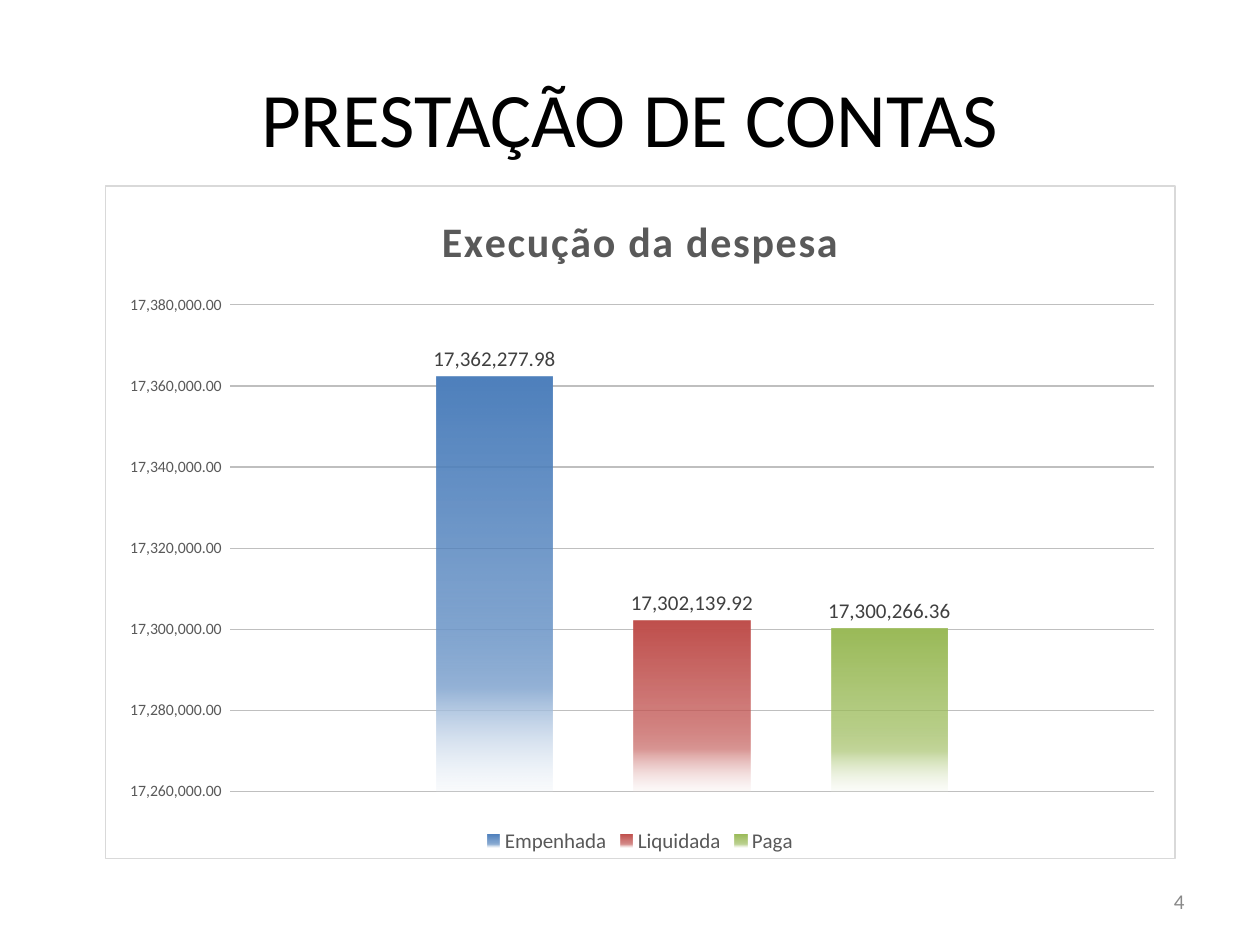
from pptx import Presentation, oxml
from pptx.chart import data
from pptx.dml import color
from pptx.enum import chart as kinds, text
from pptx.oxml import ns
from pptx import util as u

RGB = color.RGBColor
WHITE = RGB(0xFF, 0xFF, 0xFF)
BLACK = RGB(0, 0, 0)
DARK = RGB(0x40, 0x40, 0x40)
GRAY = RGB(0x59, 0x59, 0x59)
PALE = RGB(0x89, 0x89, 0x89)
GRID = RGB(0xBF, 0xBF, 0xBF)
EDGE = RGB(0xD9, 0xD9, 0xD9)

MONEY = '_(* #,##0.00_);_(* \\(#,##0.00\\);_(* "-"??_);_(@_)'
STOPS = (0, 100), (51, 75), (75, 100), (100, 15)
BARS = [
    ("Empenhada", 17362277.98,
     (RGB(0x4F, 0x81, 0xBD), RGB(0x95, 0xB3, 0xD7), RGB(0xDC, 0xE6, 0xF2))),
    ("Liquidada", 17302139.92,
     (RGB(0xC0, 0x50, 0x4D), RGB(0xD9, 0x96, 0x94), RGB(0xF2, 0xDC, 0xDB))),
    ("Paga", 17300266.36,
     (RGB(0x9B, 0xBB, 0x59), RGB(0xC3, 0xD6, 0x9B), RGB(0xEB, 0xF1, 0xDE))),
]


def apply(item, **values):
    for name, value in values.items():
        setattr(item, name, value)


class Deck:
    face = "Calibri"

    def __init__(self, wide, high):
        self.file = Presentation()
        apply(self.file, slide_width=u.Inches(wide), slide_height=u.Inches(high))
        self.slide = self.file.slides.add_slide(self.file.slide_layouts[6])

    def area(self, left, top, wide, high):
        across, down = self.file.slide_width, self.file.slide_height
        return [round(v) for v in (left * across, top * down, wide * across, high * down)]

    def style(self, font, size, ink, bold=False):
        apply(font, name=self.face, size=u.Pt(size), bold=bold)
        font.color.rgb = ink

    def label(self, words, area, size, ink, align):
        box = self.slide.shapes.add_textbox(*self.area(*area))
        apply(box.text_frame, word_wrap=True, vertical_anchor=text.MSO_ANCHOR.MIDDLE)
        line = box.text_frame.paragraphs[0]
        line.alignment = align
        run = line.add_run()
        run.text = words
        self.style(run.font, size, ink)
        return box

    def fade(self, bar, tints):
        bar.format.fill.gradient()
        old = bar._element.find(".//" + ns.qn("a:gradFill"))
        marks = "".join(
            f'<a:gs pos="{spot * 1000}"><a:srgbClr val="{tint}">'
            f'<a:alpha val="{alpha * 1000}"/></a:srgbClr></a:gs>'
            for (spot, alpha), tint in zip(STOPS, (tints[0], *tints)))
        old.getparent().replace(old, oxml.parse_xml(
            f'<a:gradFill {ns.nsdecls("a")}><a:gsLst>{marks}</a:gsLst>'
            '<a:lin ang="5400000" scaled="0"/></a:gradFill>'))

    def frame(self, chart, fill, edge):
        chart._chartSpace.find(ns.qn("c:chart")).addnext(oxml.parse_xml(
            f'<c:spPr {ns.nsdecls("c", "a")}>'
            f'<a:solidFill><a:srgbClr val="{fill}"/></a:solidFill>'
            f'<a:ln w="{u.Pt(0.75)}"><a:solidFill><a:srgbClr val="{edge}"/>'
            '</a:solidFill></a:ln></c:spPr>'))

    def head(self, chart, words):
        frame = chart.chart_title.text_frame
        frame.text = words
        run = frame.paragraphs[0].runs[0]
        self.style(run.font, 24, GRAY, True)
        run.font._element.set("spc", "100")
        chart.chart_title.include_in_layout = False

    def scale(self, axis, low, high, step):
        apply(axis, minimum_scale=low, maximum_scale=high, major_unit=step,
              major_tick_mark=kinds.XL_TICK_MARK.NONE)
        apply(axis.tick_labels, number_format=MONEY, number_format_is_linked=False)
        self.style(axis.tick_labels.font, 9, GRAY)
        axis.format.line.fill.background()
        line = axis.major_gridlines.format.line
        line.width = u.Pt(0.75)
        line.color.rgb = GRID

    def columns(self, title, bars, area):
        table = data.CategoryChartData(number_format=MONEY)
        table.categories = ["1"]
        for name, value, _ in bars:
            table.add_series(name, [value])
        chart = self.slide.shapes.add_chart(
            kinds.XL_CHART_TYPE.COLUMN_CLUSTERED, *self.area(*area), table).chart
        self.style(chart.font, 10, BLACK)
        self.frame(chart, WHITE, EDGE)
        self.head(chart, title)
        chart.category_axis.visible = False
        self.scale(chart.value_axis, 17260000, 17380000, 20000)
        chart.has_legend = True
        apply(chart.legend, position=kinds.XL_LEGEND_POSITION.BOTTOM,
              include_in_layout=False)
        self.style(chart.legend.font, 12, GRAY)
        plot = chart.plots[0]
        apply(plot, gap_width=355, overlap=-70, vary_by_categories=False)
        for bar, (_, _, tints) in zip(plot.series, bars):
            self.fade(bar, tints)
            apply(bar.data_labels, show_value=True, number_format=MONEY,
                  number_format_is_linked=False,
                  position=kinds.XL_LABEL_POSITION.OUTSIDE_END)
            self.style(bar.data_labels.font, 12, DARK)


def main():
    deck = Deck(10, 7.5)
    deck.label("4", (0.717, 0.927, 0.233, 0.053), 12, PALE, text.PP_ALIGN.RIGHT)
    title = deck.label("PRESTAÇÃO DE CONTAS", (0.05, 0.04, 0.9, 0.167), 44, BLACK,
                       text.PP_ALIGN.CENTER)
    title.fill.solid()
    title.fill.fore_color.rgb = WHITE
    deck.columns("Execução da despesa", BARS, (0.083, 0.196, 0.85, 0.713))
    deck.file.save("out.pptx")


if __name__ == "__main__":
    main()
